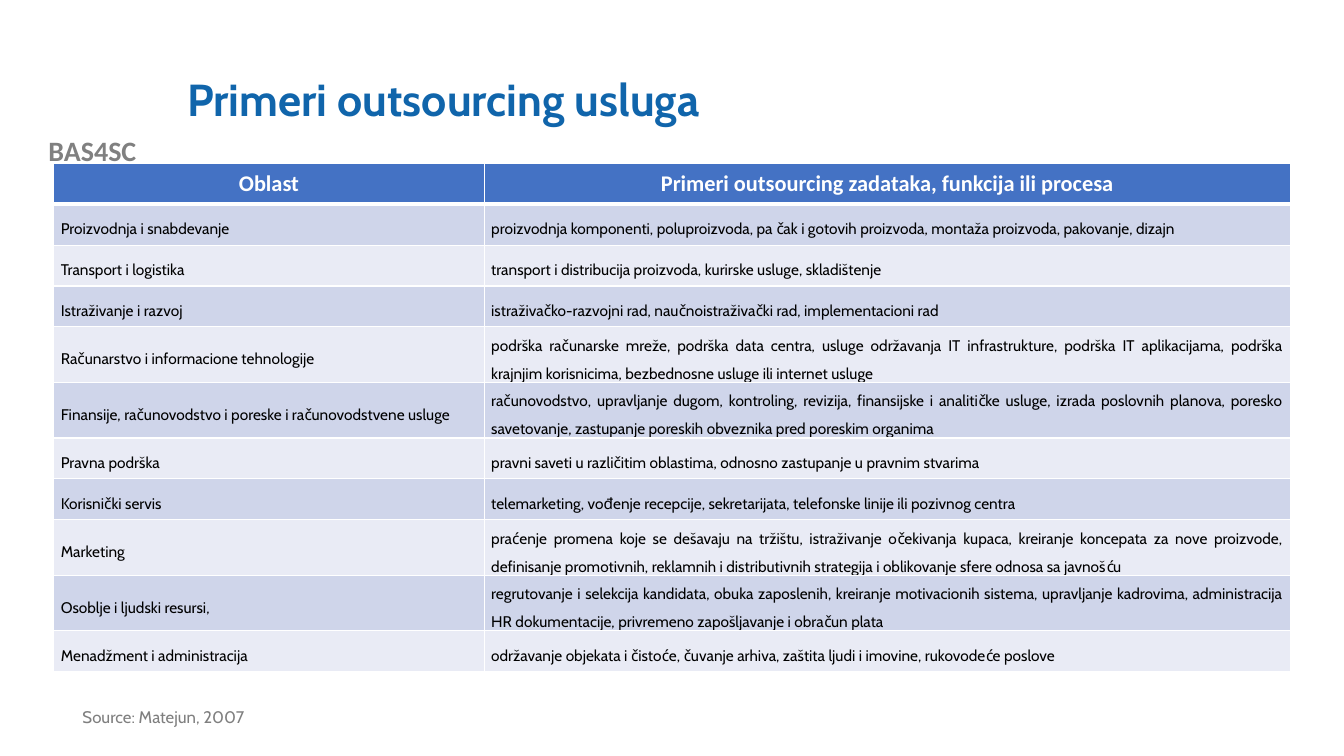
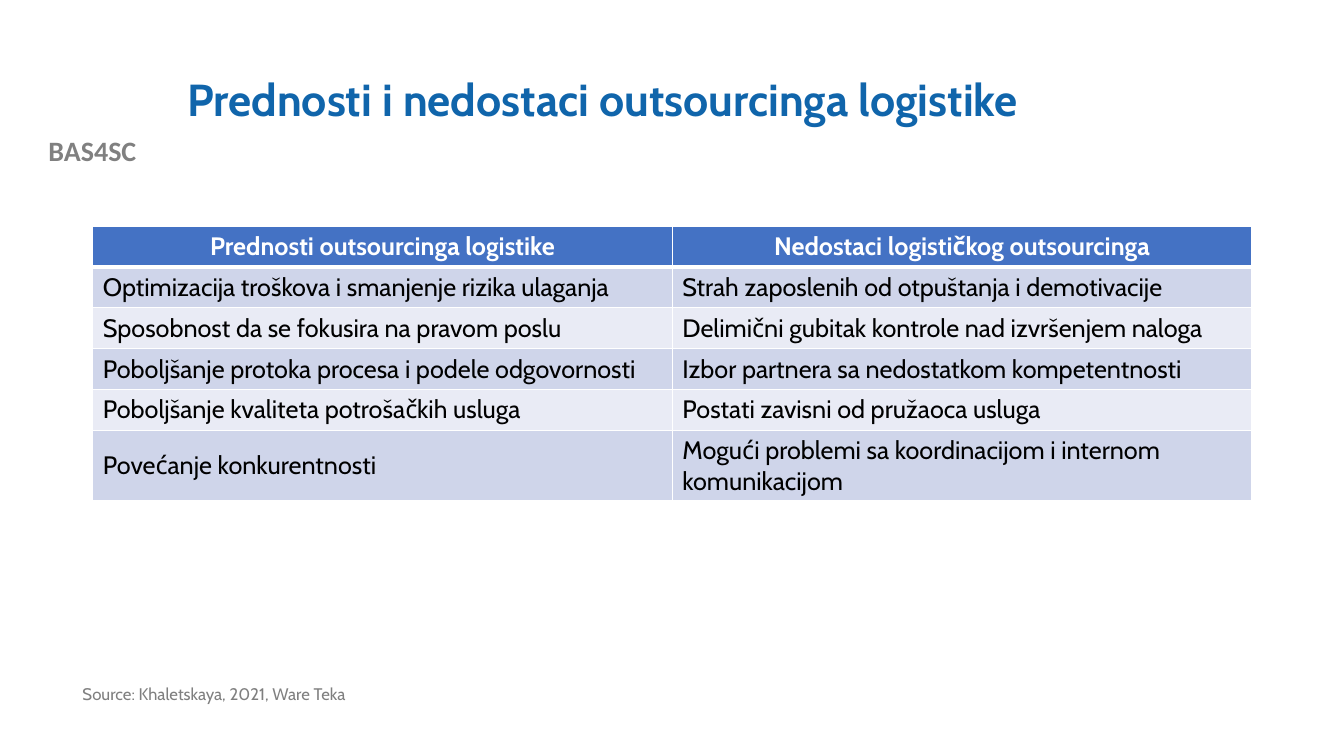
from lxml.etree import SubElement
from pptx import Presentation
from pptx.dml.color import RGBColor
from pptx.enum.text import MSO_ANCHOR as Anchor, PP_ALIGN as Align
from pptx.oxml.ns import qn
from pptx.util import Inches, Pt

BLUE = RGBColor(0x10, 0x65, 0xAB)
HEADER_BLUE = RGBColor(0x44, 0x72, 0xC4)
BANDS = (RGBColor(0xCF, 0xD5, 0xEA), RGBColor(0xE9, 0xEB, 0xF5))
GRAY = RGBColor(0x80, 0x80, 0x80)
SOURCE_GRAY = RGBColor(0x7F, 0x7F, 0x7F)
WHITE = RGBColor(0xFF, 0xFF, 0xFF)
BLACK = RGBColor(0x00, 0x00, 0x00)
FONT, LABEL_FONT = "Cabin", "Calibri"

GRID_COLUMNS, GRID_ROWS = 160, 90
TABLE_ROW = 4.87

SERVICES = [
    ("Oblast", "Primeri outsourcing zadataka, funkcija ili procesa"),
    ("Proizvodnja i snabdevanje",
     "proizvodnja komponenti, poluproizvoda, pa čak i gotovih proizvoda, montaža proizvoda, pakovanje, dizajn"),
    ("Transport i logistika",
     "transport i distribucija proizvoda, kurirske usluge, skladištenje"),
    ("Istraživanje i razvoj",
     "istraživačko-razvojni rad, naučnoistraživački rad, implementacioni rad"),
    ("Računarstvo i informacione tehnologije",
     "podrška računarske mreže, podrška data centra, usluge održavanja IT infrastrukture, "
     "podrška IT aplikacijama, podrška krajnjim korisnicima, bezbednosne usluge ili internet usluge"),
    ("Finansije, računovodstvo i poreske i računovodstvene usluge",
     "računovodstvo, upravljanje dugom, kontroling, revizija, finansijske i analitičke usluge, "
     "izrada poslovnih planova, poresko savetovanje, zastupanje poreskih obveznika pred poreskim organima"),
    ("Pravna podrška",
     "pravni saveti u različitim oblastima, odnosno zastupanje u pravnim stvarima"),
    ("Korisnički servis",
     "telemarketing, vođenje recepcije, sekretarijata, telefonske linije ili pozivnog centra"),
    ("Marketing",
     "praćenje promena koje se dešavaju na tržištu, istraživanje očekivanja kupaca, "
     "kreiranje koncepata za nove proizvode, definisanje promotivnih, reklamnih i "
     "distributivnih strategija i oblikovanje sfere odnosa sa javnošću"),
    ("Osoblje i ljudski resursi,",
     "regrutovanje i selekcija kandidata, obuka zaposlenih, kreiranje motivacionih sistema, "
     "upravljanje kadrovima, administracija HR dokumentacije, privremeno zapošljavanje i obračun plata"),
    ("Menadžment i administracija",
     "održavanje objekata i čistoće, čuvanje arhiva, zaštita ljudi i imovine, rukovodeće poslove"),
]

PROS_AND_CONS = [
    ("Prednosti outsourcinga logistike", "Nedostaci logističkog outsourcinga"),
    ("Optimizacija troškova i smanjenje rizika ulaganja",
     "Strah zaposlenih od otpuštanja i demotivacije"),
    ("Sposobnost da se fokusira na pravom poslu",
     "Delimični gubitak kontrole nad izvršenjem naloga"),
    ("Poboljšanje protoka procesa i podele odgovornosti",
     "Izbor partnera sa nedostatkom kompetentnosti"),
    ("Poboljšanje kvaliteta potrošačkih usluga", "Postati zavisni od pružaoca usluga"),
    ("Povećanje konkurentnosti",
     "Mogući problemi sa koordinacijom i internom komunikacijom"),
]


def set_font(paragraph, size, color, bold=False, name=FONT):
    font = paragraph.font
    font.name, font.size, font.bold = name, Pt(size), bold
    font.color.rgb = color


def set_borders(cell, **widths):
    """Draw white cell edges; widths in points, keyed L, R, T, B."""
    properties = cell._tc.get_or_add_tcPr()
    for side, width in widths.items():
        line = SubElement(properties, qn(f"a:ln{side}"), w=str(Pt(width)))
        fill = SubElement(line, qn("a:solidFill"))
        SubElement(fill, qn("a:srgbClr"), val=str(WHITE))


class Deck:
    def __init__(self):
        self.presentation = Presentation()
        self.presentation.slide_width = Inches(13.333)
        self.presentation.slide_height = Inches(7.5)
        self.slide = None

    def x(self, columns):
        return round(self.presentation.slide_width * columns / GRID_COLUMNS)

    def y(self, rows):
        return round(self.presentation.slide_height * rows / GRID_ROWS)

    def add_slide(self, title, source, source_top):
        """Start a slide with its label, title and source line."""
        layout = self.presentation.slide_layouts[6]
        self.slide = self.presentation.slides.add_slide(layout)
        self.add_text("BAS4SC", 0, 15.36, 22, 5.28, 20, GRAY, bold=True,
                      name=LABEL_FONT, align=Align.CENTER)
        self.add_text(title, 21.1, 4.8, 128, 14.6, 32, BLUE, bold=True,
                      anchor=Anchor.MIDDLE, spacing=0.9)
        self.add_text(source, 8.64, source_top, 60, 6.24, 12, SOURCE_GRAY,
                      spacing=0.9)

    def add_text(self, text, left, top, width, height, size, color, bold=False,
                 name=FONT, align=Align.LEFT, anchor=Anchor.TOP, spacing=1.0):
        shape = self.slide.shapes.add_textbox(
            self.x(left), self.y(top), self.x(width), self.y(height))
        frame = shape.text_frame
        frame.word_wrap = True
        frame.vertical_anchor = anchor
        paragraph = frame.paragraphs[0]
        paragraph.text = text
        paragraph.alignment = align
        paragraph.line_spacing = spacing
        set_font(paragraph, size, color, bold, name)

    def add_table(self, rows, left, top, widths, size, header_size,
                  header_font=FONT, dense=False):
        """Add a banded table; dense justifies the body and trims its margins."""
        table = self.slide.shapes.add_table(
            len(rows), len(widths), self.x(left), self.y(top),
            self.x(sum(widths)), self.y(TABLE_ROW * len(rows))).table
        for column, width in zip(table.columns, widths):
            column.width = self.x(width)
        for row_index, texts in enumerate(rows):
            table.rows[row_index].height = self.y(TABLE_ROW)
            header = row_index == 0
            for column_index, text in enumerate(texts):
                cell = table.cell(row_index, column_index)
                set_borders(cell, L=1, R=1, T=3 if row_index == 1 else 1,
                            B=3 if header else 1)
                cell.fill.solid()
                cell.fill.fore_color.rgb = (
                    HEADER_BLUE if header else BANDS[(row_index - 1) % 2])
                cell.vertical_anchor = Anchor.MIDDLE
                paragraph = cell.text_frame.paragraphs[0]
                paragraph.text = text
                if header:
                    paragraph.alignment = Align.CENTER
                    set_font(paragraph, header_size, WHITE, True, header_font)
                    continue
                set_font(paragraph, size, BLACK)
                if dense:
                    cell.margin_left = cell.margin_right = Inches(0.07)
                    cell.margin_top = cell.margin_bottom = 0
                    paragraph.alignment = Align.JUSTIFY
                    paragraph.line_spacing = 1.5
                    paragraph.space_after = Pt(6)


def main():
    deck = Deck()
    deck.add_slide("Primeri outsourcing usluga", "Source: Matejun, 2007", 83.76)
    deck.add_table(SERVICES, 6.4, 19.45, (51.24, 96), size=11, header_size=16,
                   header_font=LABEL_FONT, dense=True)
    deck.add_slide("Prednosti i nedostaci outsourcinga logistike",
                   "Source: Khaletskaya, 2021, Ware Teka", 81.12)
    deck.add_table(PROS_AND_CONS, 11.04, 26.9, (69, 69), size=18, header_size=18)
    deck.presentation.save("out.pptx")


if __name__ == "__main__":
    main()
